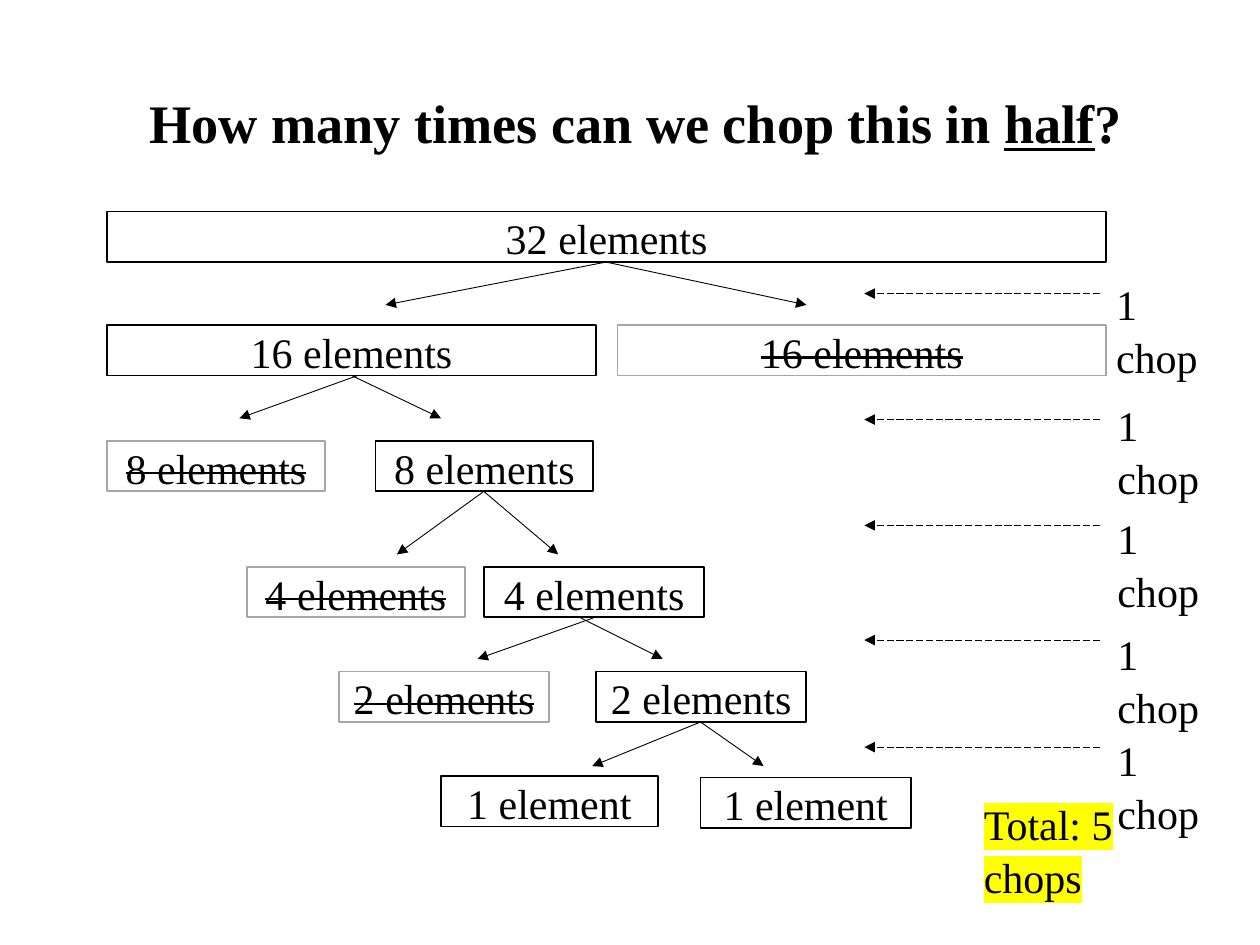
from pptx import Presentation
from pptx.dml.color import RGBColor
from pptx.enum.dml import MSO_LINE
from pptx.enum.shapes import MSO_CONNECTOR, MSO_SHAPE
from pptx.enum.text import MSO_ANCHOR, MSO_AUTO_SIZE, PP_ALIGN
from pptx.oxml.ns import qn
from pptx.util import Inches, Pt
from lxml import etree

RECTANGLE = MSO_SHAPE.RECTANGLE
STRAIGHT = MSO_CONNECTOR.STRAIGHT
LONG_DASH = MSO_LINE.LONG_DASH
MIDDLE, TOP = MSO_ANCHOR.MIDDLE, MSO_ANCHOR.TOP
CENTER, LEFT = PP_ALIGN.CENTER, PP_ALIGN.LEFT
NO_FIT, GROW = MSO_AUTO_SIZE.NONE, MSO_AUTO_SIZE.SHAPE_TO_FIT_TEXT

BLACK, GREY, YELLOW = "000000", "A6A6A6", "FFFF00"
BOX_HEIGHT = 0.4
TITLE = [("How many times can we chop this in ", {}),
         ("half", {"underline": True}), ("?", {})]

# Each level: list of (left, top, width, text, discarded)
LEVELS = [
    [(0.85, 1.68, 7.93, "32 elements", False)],
    [(0.85, 2.58, 3.88, "16 elements", False), (4.9, 2.58, 3.88, "16 elements", True)],
    [(0.85, 3.5, 1.73, "8 elements", True), (2.98, 3.5, 1.73, "8 elements", False)],
    [(1.96, 4.5, 1.73, "4 elements", True), (3.84, 4.5, 1.75, "4 elements", False)],
    [(2.69, 5.33, 1.67, "2 elements", True), (4.73, 5.33, 1.67, "2 elements", False)],
    [(3.5, 6.16, 1.72, "1 element", False), (5.56, 6.17, 1.67, "1 element", False)],
]
# Each chop: start and end height, (start x, end x) of both arrows,
# height of the dashed pointer, left and top of its label
CHOPS = [
    (2.08, 2.42, [(4.81, 3.06), (4.81, 6.4)], 2.33, 8.76, 2.14),
    (2.98, 3.32, [(2.84, 1.9), (2.79, 3.5)], 3.33, 8.77, 3.1),
    (3.9, 4.4, [(3.84, 3.15), (3.84, 4.43)], 4.17, 8.77, 4.0),
    (4.9, 5.23, [(4.72, 3.79), (4.6, 5.26)], 5.08, 8.77, 4.92),
    (5.73, 6.08, [(5.56, 4.7), (5.56, 6.06)], 5.93, 8.77, 5.76),
]


def color(hex_value):
    return RGBColor.from_string(hex_value)


def apply(target, values):
    for name, value in values.items():
        setattr(target, name, value)


class ChopSlide:
    text_style = {"name": "Times New Roman", "size": Pt(24)}
    title_style = {"name": "Times New Roman", "size": Pt(31), "bold": True}

    def __init__(self, deck):
        self.slide = deck.slides.add_slide(deck.slide_layouts[5])

    def fill_text(self, shape, spans, style, frame_format, align, spacing=1.05):
        frame = shape.text_frame
        apply(frame, {"word_wrap": True, **frame_format})
        para = frame.paragraphs[0]
        apply(para, {"alignment": align, "line_spacing": spacing})
        for text, extra in spans:
            span = para.add_run()
            span.text = text
            apply(span.font, {**style, **extra})
            span.font.color.rgb = color(BLACK)
        return para

    def title(self, spans, *place):
        shape = self.slide.shapes.title
        apply(shape, dict(zip(("left", "top", "width", "height"), map(Inches, place))))
        self.fill_text(shape, spans, self.title_style,
                       {"vertical_anchor": MIDDLE, "auto_size": NO_FIT}, CENTER, 1.0)

    def box(self, left, top, width, text, discarded):
        shape = self.slide.shapes.add_shape(
            RECTANGLE, *map(Inches, (left, top, width, BOX_HEIGHT)))
        shape.shadow.inherit = False
        shape.fill.background()
        shape.line.color.rgb = color(GREY if discarded else BLACK)
        shape.line.width = Pt(1)
        para = self.fill_text(shape, [(text, {})], self.text_style,
                              {"vertical_anchor": MIDDLE}, CENTER)
        if discarded:
            para.runs[0].font._element.set("strike", "sngStrike")

    def label(self, text, left, top, width, highlight=None):
        shape = self.slide.shapes.add_textbox(
            *map(Inches, (left, top, width, BOX_HEIGHT)))
        para = self.fill_text(shape, [(text, {})], self.text_style,
                              {"vertical_anchor": TOP, "auto_size": GROW}, LEFT)
        if highlight:
            fill = para.runs[0].font._element.find(qn("a:solidFill"))
            mark = etree.Element(qn("a:highlight"))
            etree.SubElement(mark, qn("a:srgbClr"), val=highlight)
            fill.addnext(mark)

    def arrow(self, x1, y1, x2, y2, dash=None):
        connector = self.slide.shapes.add_connector(
            STRAIGHT, *map(Inches, (x1, y1, x2, y2)))
        connector.line.color.rgb = color(BLACK)
        connector.line.width = Pt(0.5)
        if dash:
            connector.line.dash_style = dash
        properties = connector._element.spPr
        etree.SubElement(properties.find(qn("a:ln")), qn("a:tailEnd"), type="triangle")
        etree.SubElement(properties, qn("a:effectLst"))


def main():
    deck = Presentation()
    deck.slide_width, deck.slide_height = Inches(10), Inches(7.5)
    page = ChopSlide(deck)
    page.title(TITLE, 0.92, 0.58, 8.25, 0.77)

    # Halving tree
    for level in LEVELS:
        for box in level:
            page.box(*box)

    # Branches and the chop counted at each level
    for start, end, branches, pointer, label_left, label_top in CHOPS:
        for start_x, end_x in branches:
            page.arrow(start_x, start, end_x, end)
        page.arrow(8.73, pointer, 6.86, pointer, LONG_DASH)
        page.label("1 chop", label_left, label_top, 0.96)

    # Total
    page.label("Total: 5 chops", 7.71, 6.27, 1.87, YELLOW)
    deck.save("out.pptx")


if __name__ == "__main__":
    main()
